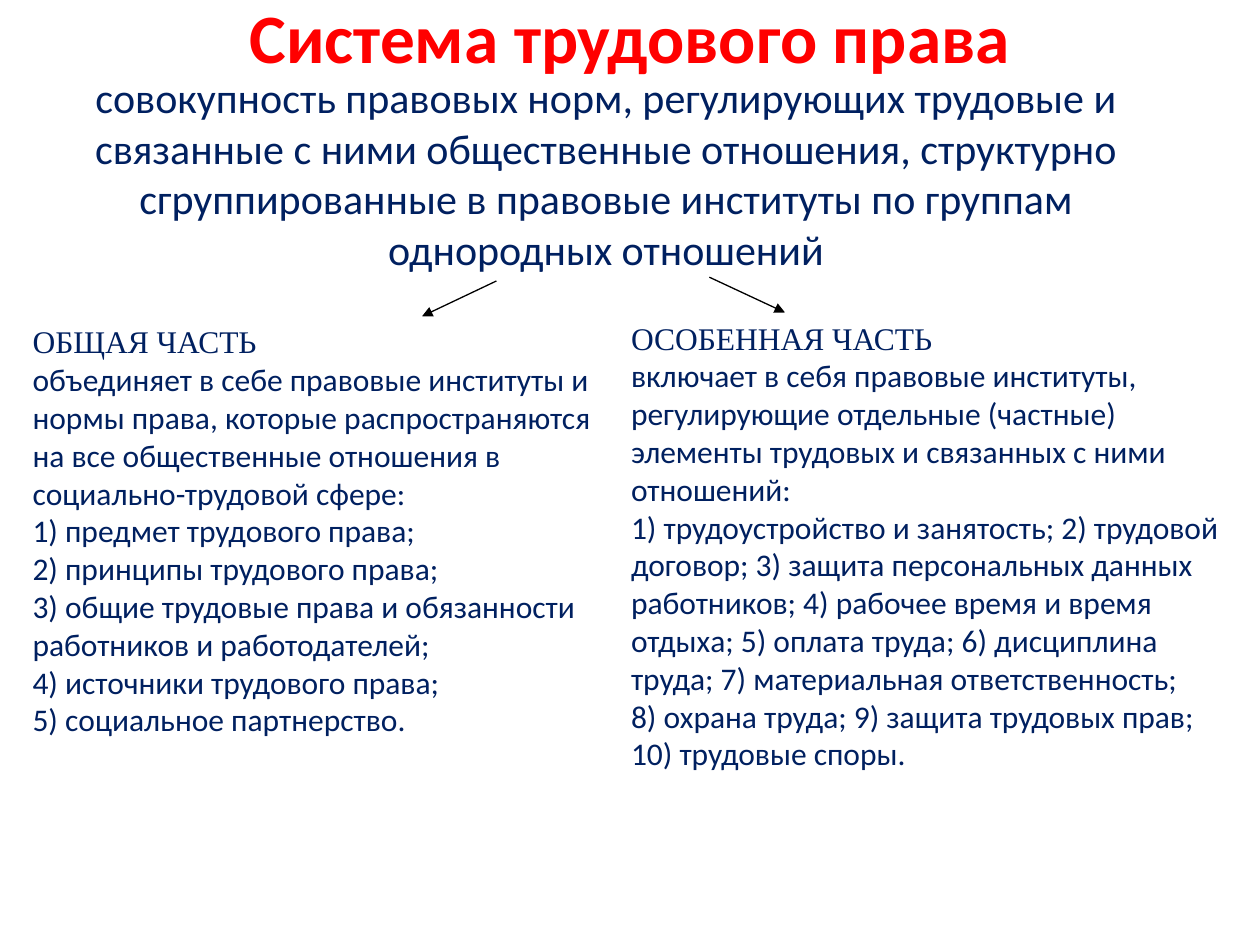
from dataclasses import dataclass

from lxml.etree import SubElement
from pptx import Presentation
from pptx.dml.color import RGBColor
from pptx.enum.shapes import MSO_CONNECTOR
from pptx.enum.text import MSO_ANCHOR, MSO_AUTO_SIZE, PP_ALIGN
from pptx.oxml.ns import qn
from pptx.shapes.autoshape import Shape
from pptx.slide import Slide
from pptx.text.text import _Paragraph as Paragraph
from pptx.util import Inches, Length, Pt

# The page is a grid of 100 columns by 75 rows with square cells.
COLUMNS, ROWS, CELL = 100, 75, 0.1
RED, NAVY, BLACK = "FF0000", "002060", "000000"
SANS, SERIF = "Calibri", "Times New Roman"


@dataclass(frozen=True)
class Area:
    column: float
    row: float
    width: float
    height: float


@dataclass(frozen=True)
class Arrow:
    start: tuple[float, float]
    end: tuple[float, float]


@dataclass(frozen=True)
class Part:
    area: Area
    heading: str
    lines: tuple[str, ...]


TITLE = "Система трудового права"
DEFINITION = (
    "совокупность правовых норм, регулирующих трудовые и связанные с ними "
    "общественные отношения, структурно сгруппированные в правовые институты "
    "по группам однородных отношений"
)
ARROWS = (
    Arrow((39.4, 22.3), (33.5, 25.1)),
    Arrow((56.3, 22), (62.3, 24.8)),
)
PARTS = (
    Part(
        Area(1.6, 25.1, 46.5, 37.4),
        "ОБЩАЯ ЧАСТЬ",
        (
            "объединяет в себе правовые институты и нормы права, которые "
            "распространяются на все общественные отношения в "
            "социально-трудовой сфере:",
            "1) предмет трудового права;",
            "2) принципы трудового права;",
            "3) общие трудовые права и обязанности работников и работодателей;",
            "4) источники трудового права;",
            "5) социальное партнерство.",
        ),
    ),
    Part(
        Area(49.1, 24.8, 49.2, 40.4),
        "ОСОБЕННАЯ ЧАСТЬ",
        (
            "включает в себя правовые институты, регулирующие отдельные "
            "(частные) элементы трудовых и связанных с ними отношений:",
            "1) трудоустройство и занятость; 2) трудовой договор; 3) защита "
            "персональных данных работников; 4) рабочее время и время отдыха; "
            "5) оплата труда; 6) дисциплина труда; 7) материальная "
            "ответственность;",
            "8) охрана труда; 9) защита трудовых прав;",
            "10) трудовые споры.",
        ),
    ),
)


def cells(count: float) -> Length:
    return Inches(count * CELL)


def color(value: str) -> RGBColor:
    return RGBColor.from_string(value)


def add_span(para: Paragraph, text: str, size: float, font: str = SANS,
             fill: str = NAVY, bold: bool = False) -> None:
    span = para.add_run()
    span.text = text
    span.font.name = font
    span.font.size = Pt(size)
    span.font.bold = bold
    span.font.color.rgb = color(fill)


def place(box: Shape, area: Area, anchor: MSO_ANCHOR) -> Paragraph:
    """Move a placeholder and return its centred first paragraph."""
    box.left, box.top = cells(area.column), cells(area.row)
    box.width, box.height = cells(area.width), cells(area.height)
    frame = box.text_frame
    frame.auto_size = MSO_AUTO_SIZE.NONE
    frame.vertical_anchor = anchor
    para = frame.paragraphs[0]
    para.alignment = PP_ALIGN.CENTER
    para.space_before = Pt(0)
    return para


def remove_bullet(para: Paragraph) -> None:
    properties = para._p.get_or_add_pPr()
    properties.set("marL", "0")
    properties.set("indent", "0")
    SubElement(properties, qn("a:buNone"))


def add_arrow(page: Slide, arrow: Arrow) -> None:
    ends = [cells(value) for value in (*arrow.start, *arrow.end)]
    line = page.shapes.add_connector(MSO_CONNECTOR.STRAIGHT, *ends)
    line.line.color.rgb = color(BLACK)
    line.line.width = Pt(0.75)
    SubElement(line.line._get_or_add_ln(), qn("a:tailEnd"), type="triangle")
    SubElement(line._element.spPr, qn("a:effectLst"))


def add_part(page: Slide, part: Part) -> None:
    area = part.area
    box = page.shapes.add_textbox(cells(area.column), cells(area.row),
                                  cells(area.width), cells(area.height))
    frame = box.text_frame
    frame.word_wrap = True
    frame.auto_size = MSO_AUTO_SIZE.SHAPE_TO_FIT_TEXT
    add_span(frame.paragraphs[0], part.heading, 18, SERIF)
    for line in part.lines:
        add_span(frame.add_paragraph(), line, 18)


def main() -> None:
    deck = Presentation()
    deck.slide_width, deck.slide_height = cells(COLUMNS), cells(ROWS)
    page = deck.slides.add_slide(deck.slide_layouts[1])
    title, body = page.placeholders

    heading = place(title, Area(5, 0.5, 90, 4.7), MSO_ANCHOR.MIDDLE)
    add_span(heading, TITLE, 39.6, fill=RED, bold=True)
    definition = place(body, Area(1.2, 5.2, 93.8, 61.8), MSO_ANCHOR.TOP)
    remove_bullet(definition)
    add_span(definition, DEFINITION, 24)

    for arrow in ARROWS:
        add_arrow(page, arrow)
    for part in PARTS:
        add_part(page, part)
    deck.save("out.pptx")


if __name__ == "__main__":
    main()
